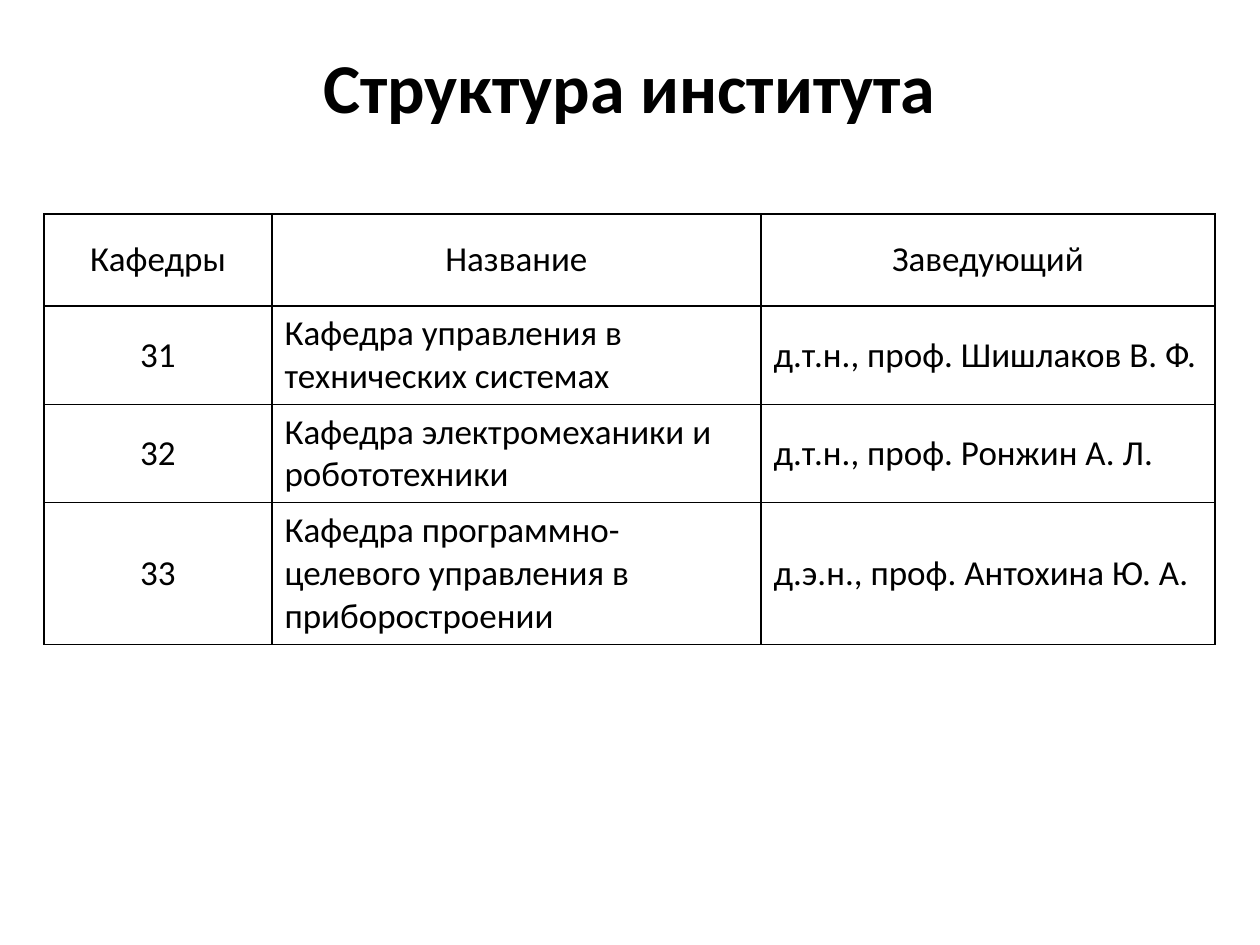
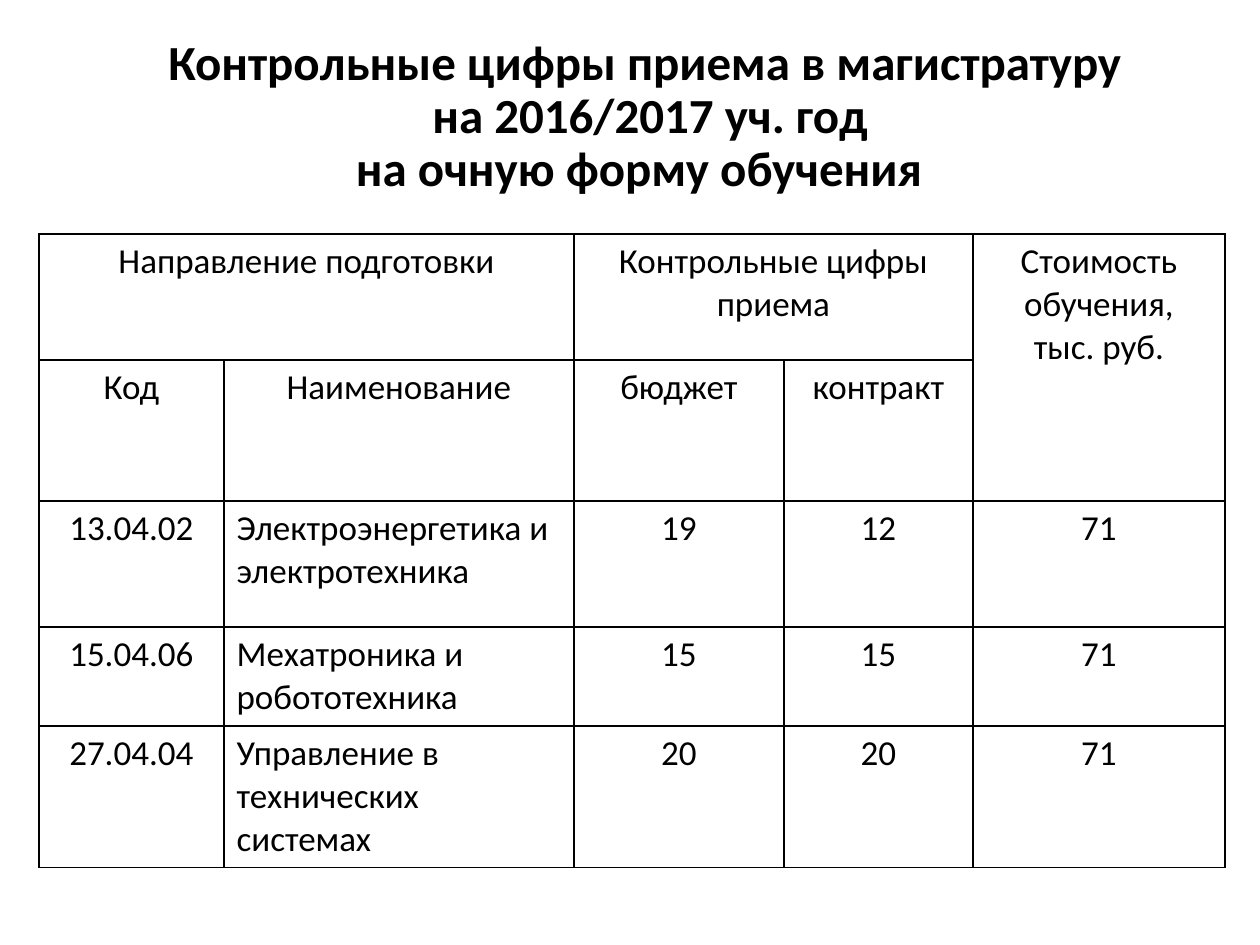
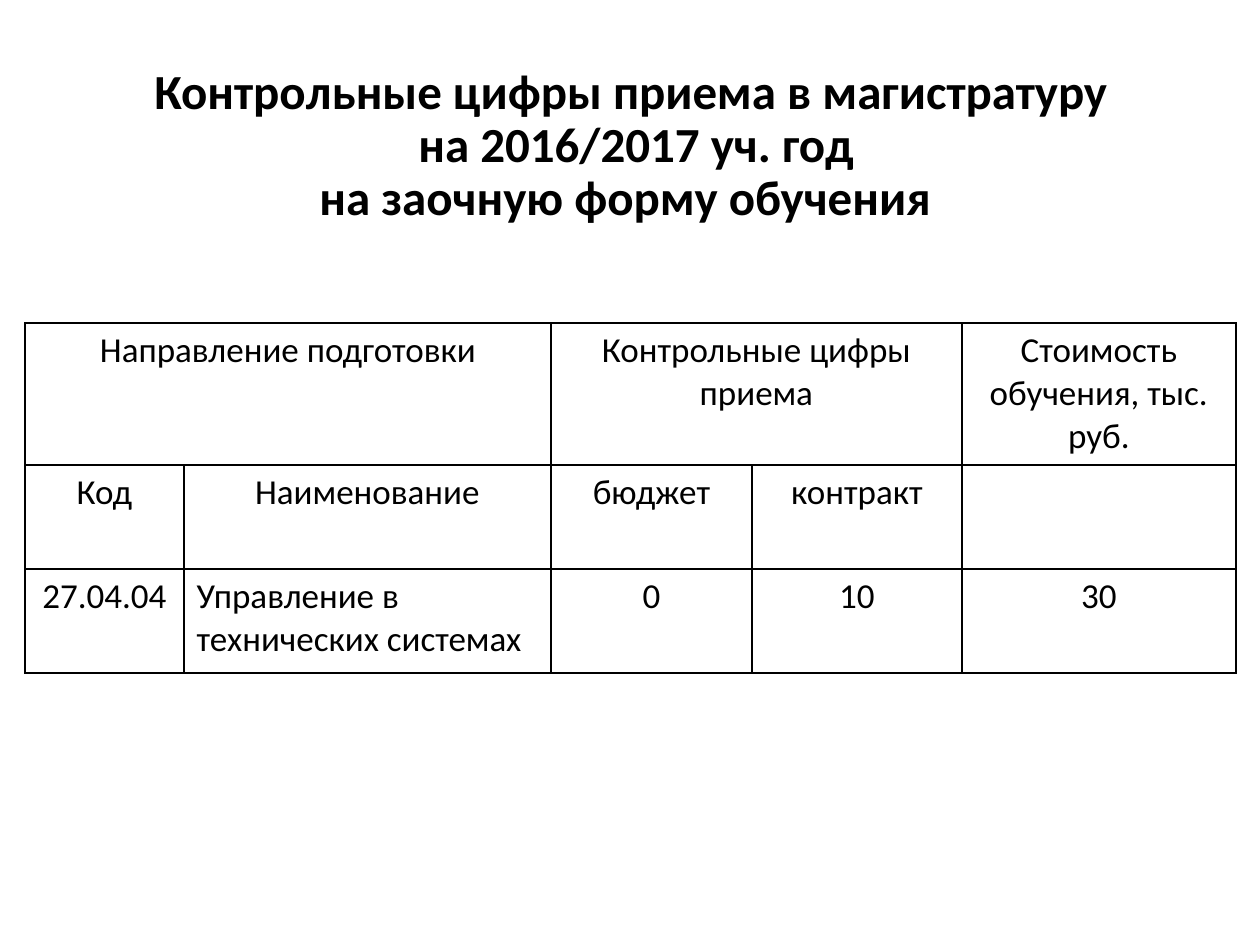
from pptx import Presentation
from pptx.dml.color import RGBColor
from pptx.enum.text import MSO_ANCHOR, MSO_AUTO_SIZE, PP_ALIGN
from pptx.oxml import parse_xml
from pptx.oxml.ns import nsdecls
from pptx.util import Pt

LEFT, CENTER = PP_ALIGN.LEFT, PP_ALIGN.CENTER
TOP, MIDDLE, BOTTOM = MSO_ANCHOR.TOP, MSO_ANCHOR.MIDDLE, MSO_ANCHOR.BOTTOM
NO_AUTOFIT = MSO_AUTO_SIZE.NONE

# Shared look: 126 px to the inch
PX = 914400 / 126
FONT = "Calibri"
BLACK = "000000"
TITLE_SPACING = 0.9
CELL_SIZE = 20
BORDER_WIDTH = Pt(1)
TITLE_ONLY_LAYOUT = 5


def px(length):
    return round(length * PX)


def add_span(para, text, size, bold=False):
    span = para.add_run()
    span.text = text
    span.font.name = FONT
    span.font.size = Pt(size)
    span.font.bold = bold
    span.font.color.rgb = RGBColor.from_string(BLACK)


# Wording shared by the two admission slides
ADMISSION_TITLE = ["Контрольные цифры приема в магистратуру", " на 2016/2017 уч. год"]
GROUP_HEADS = ["Направление подготовки", "", "Контрольные цифры приема", ""]
COLUMN_HEADS = ["Код", "Наименование", "бюджет", "контракт", ""]
GROUP_MERGES = [((0, 0), (0, 1)), ((0, 2), (0, 3))]

# Boxes are left, top, width, height; a line feed in a cell starts a paragraph
pages = [
    {
        "title": ["Структура института"],
        "title_size": 40,
        "title_box": (94, 37, 1071, 98),
        "table_at": (44, 214),
        "columns": [228, 489, 454],
        "rows": [92, 98, 98, 142],
        "head_rows": 1,
        "left_columns": {1, 2},
        "anchor": MIDDLE,
        "merges": [],
        "cells": [
            ["Кафедры", "Название", "Заведующий"],
            ["31", "Кафедра управления в технических системах",
             "д.т.н., проф. Шишлаков В. Ф."],
            ["32", "Кафедра электромеханики и робототехники",
             "д.т.н., проф. Ронжин А. Л."],
            ["33", "Кафедра программно-целевого управления в приборостроении",
             "д.э.н., проф. Антохина Ю. А."],
        ],
    },
    {
        "title": ADMISSION_TITLE + ["на очную форму обучения "],
        "title_size": 28,
        "title_box": (39, 16, 1211, 187),
        "table_at": (39, 234),
        "columns": [185, 350, 210, 189, 252],
        "rows": [126, 141, 126, 99, 126],
        "head_rows": 2,
        "left_columns": {1},
        "anchor": TOP,
        "merges": GROUP_MERGES + [((0, 4), (1, 4))],
        "cells": [
            GROUP_HEADS + ["Стоимость обучения,\nтыс. руб."],
            COLUMN_HEADS,
            ["13.04.02", "Электроэнергетика и электротехника", "19", "12", "71"],
            ["15.04.06", "Мехатроника и робототехника", "15", "15", "71"],
            ["27.04.04", "Управление в технических системах", "20", "20", "71"],
        ],
    },
    {
        "title": ADMISSION_TITLE + ["на заочную форму обучения "],
        "title_size": 28,
        "title_box": (25, 45, 1211, 187),
        "table_at": (25, 323),
        "columns": [159, 367, 201, 210, 274],
        "rows": [142, 104, 104],
        "head_rows": 2,
        "left_columns": {1},
        "anchor": TOP,
        "merges": GROUP_MERGES,
        "cells": [
            GROUP_HEADS + ["Стоимость обучения, тыс. руб."],
            COLUMN_HEADS,
            ["27.04.04", "Управление в технических системах", "0", "10", "30"],
        ],
    },
]

deck = Presentation()
deck.slide_width, deck.slide_height = px(1260), px(945)

for page in pages:
    slide = deck.slides.add_slide(deck.slide_layouts[TITLE_ONLY_LAYOUT])

    # Title
    title = slide.shapes.title
    title.left, title.top, title.width, title.height = map(px, page["title_box"])
    frame = title.text_frame
    frame.word_wrap = True
    frame.auto_size = NO_AUTOFIT
    frame.vertical_anchor = BOTTOM
    para = frame.paragraphs[0]
    para.alignment = CENTER
    para.line_spacing = TITLE_SPACING
    for number, line in enumerate(page["title"]):
        if number:
            para.add_line_break()
        add_span(para, line, page["title_size"], bold=True)

    # Table grid
    columns, rows = page["columns"], page["rows"]
    left, top = page["table_at"]
    table = slide.shapes.add_table(len(rows), len(columns), px(left), px(top),
                                   px(sum(columns)), px(sum(rows))).table
    table.first_row = table.horz_banding = False
    for column, width in zip(table.columns, columns):
        column.width = px(width)
    for row, height in zip(table.rows, rows):
        row.height = px(height)
    for first, last in page["merges"]:
        table.cell(*first).merge(table.cell(*last))

    # Cells: borders, no fill, text
    for row_number, texts in enumerate(page["cells"]):
        for column_number, text in enumerate(texts):
            cell = table.cell(row_number, column_number)
            cell.vertical_anchor = page["anchor"]
            properties = cell._tc.get_or_add_tcPr()
            for side in ("lnL", "lnR", "lnT", "lnB"):
                properties.append(parse_xml(
                    f'<a:{side} {nsdecls("a")} w="{BORDER_WIDTH}"><a:solidFill>'
                    f'<a:srgbClr val="{BLACK}"/></a:solidFill></a:{side}>'))
            cell.fill.background()
            if not text:
                continue
            is_left = (row_number >= page["head_rows"]
                       and column_number in page["left_columns"])
            for number, line in enumerate(text.split("\n")):
                frame = cell.text_frame
                para = frame.add_paragraph() if number else frame.paragraphs[0]
                para.alignment = LEFT if is_left else CENTER
                add_span(para, line, CELL_SIZE)

deck.save("out.pptx")
